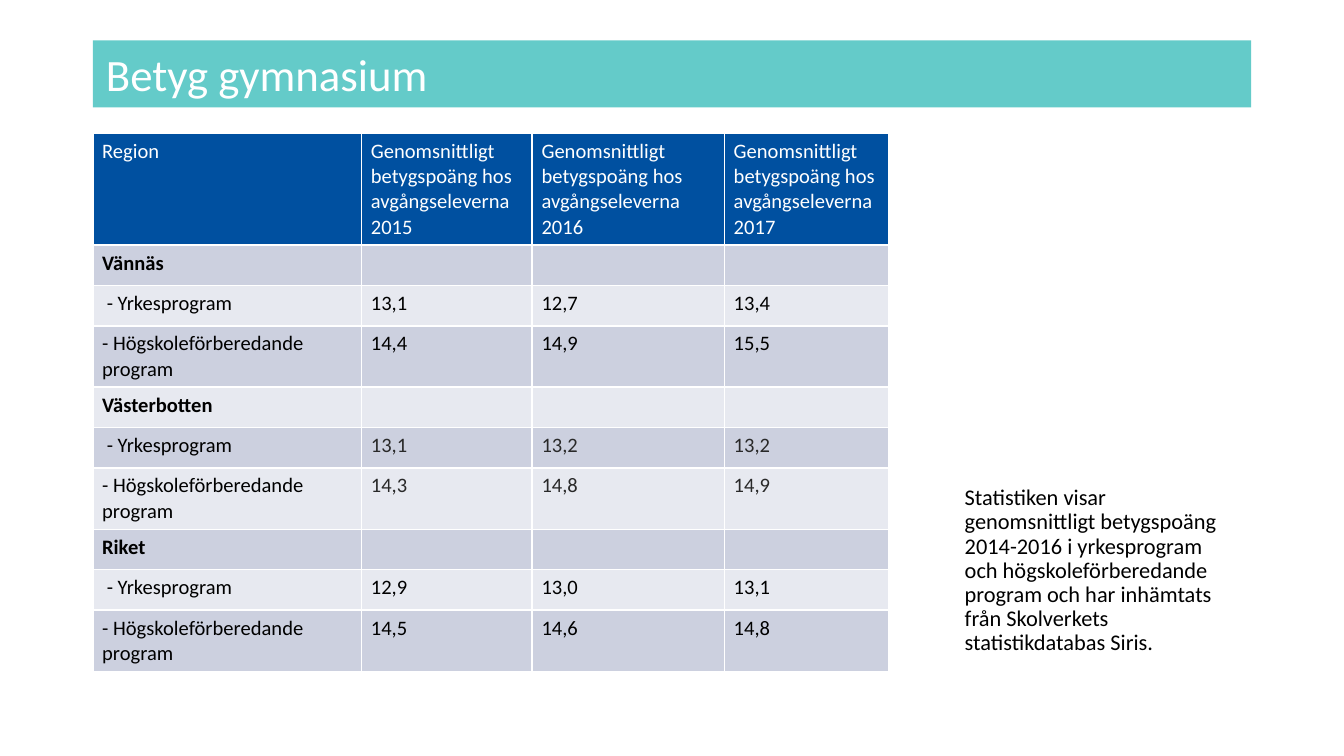
"""Build the slide with upper secondary school grades by region."""
from lxml.etree import SubElement
from pptx import Presentation
from pptx.dml.color import RGBColor
from pptx.enum.shapes import MSO_SHAPE
from pptx.enum.text import MSO_ANCHOR, PP_ALIGN
from pptx.oxml.ns import qn
from pptx.util import Inches, Pt

COLORS = {
    "banner": "64CBC9",
    "header": "0050A0",
    "band_dark": "CCD0DF",
    "band_light": "E7E9F0",
    "white": "FFFFFF",
    "black": "000000",
    "gray": "292929",
}
YEARS = [2015, 2016, 2017]
REGIONS = {
    "Vännäs": (["13,1", "12,7", "13,4"], ["14,4", "14,9", "15,5"]),
    "Västerbotten": (["13,1", "13,2", "13,2"], ["14,3", "14,8", "14,9"]),
    "Riket": (["12,9", "13,0", "13,1"], ["14,5", "14,6", "14,8"]),
}
COLUMN_WIDTHS = [2, 1.27, 1.43, 1.22]
HEADER_HEIGHT = 0.78
REGION_HEIGHTS = [0.3, 0.3, 0.42]
CELL_FORMAT = {
    "margin_left": Inches(0.07),
    "margin_right": Inches(0.07),
    "margin_top": Inches(0.04),
    "margin_bottom": Inches(0.04),
    "vertical_anchor": MSO_ANCHOR.TOP,
}


def write_text(paragraph, text, size, color, bold=False):
    paragraph.alignment = PP_ALIGN.LEFT
    run = paragraph.add_run()
    run.text = text
    font_format = {"name": "Calibri", "size": Pt(size), "bold": bold}
    for name, value in font_format.items():
        setattr(run.font, name, value)
    run.font.color.rgb = RGBColor.from_string(COLORS[color])


def add_borders(cell):
    properties = cell._tc.get_or_add_tcPr()
    for position, side in enumerate(["lnL", "lnR", "lnT", "lnB"]):
        line = properties.makeelement(qn(f"a:{side}"), {"w": str(Pt(1))})
        properties.insert(position, line)
        fill = SubElement(line, qn("a:solidFill"))
        SubElement(fill, qn("a:srgbClr"), val=COLORS["white"])


presentation = Presentation()
presentation.slide_width = Inches(10)
presentation.slide_height = Inches(10 * 9 / 16)
slide = presentation.slides.add_slide(presentation.slide_layouts[6])

banner = slide.shapes.add_shape(
    MSO_SHAPE.RECTANGLE, Inches(0.69), Inches(0.3), Inches(8.62), Inches(0.5)
)
banner.shadow.inherit = False
banner.fill.solid()
banner.fill.fore_color.rgb = RGBColor.from_string(COLORS["banner"])
banner.line.fill.background()
banner.text_frame.vertical_anchor = MSO_ANCHOR.MIDDLE
write_text(banner.text_frame.paragraphs[0], "Betyg gymnasium", 24, "white")

rows = [["Region"] + [f"Genomsnittligt betygspoäng hos avgångseleverna {year}" for year in YEARS]]
for region, (vocational, preparatory) in REGIONS.items():
    rows.append([region, "", "", ""])
    rows.append([" - Yrkesprogram"] + vocational)
    rows.append(["- Högskoleförberedande program"] + preparatory)
row_heights = [HEADER_HEIGHT] + REGION_HEIGHTS * len(REGIONS)

table = slide.shapes.add_table(
    len(rows), len(COLUMN_WIDTHS), Inches(0.69), Inches(0.99),
    Inches(sum(COLUMN_WIDTHS)), Inches(sum(row_heights)),
).table
for column, width in zip(table.columns, COLUMN_WIDTHS):
    column.width = Inches(width)

current_region = None
for row_index, (values, height) in enumerate(zip(rows, row_heights)):
    table.rows[row_index].height = Inches(height)
    is_header = row_index == 0
    if values[0] in REGIONS:
        current_region = values[0]
    band = "header" if is_header else "band_dark" if row_index % 2 else "band_light"
    for column_index, text in enumerate(values):
        cell = table.cell(row_index, column_index)
        for name, value in CELL_FORMAT.items():
            setattr(cell, name, value)
        cell.fill.solid()
        cell.fill.fore_color.rgb = RGBColor.from_string(COLORS[band])
        add_borders(cell)
        paragraph = cell.text_frame.paragraphs[0]
        if text:
            is_gray = current_region == "Västerbotten" and column_index > 0
            color = "white" if is_header else "gray" if is_gray else "black"
            write_text(paragraph, text, 11, color, bold=text in REGIONS)
        else:
            SubElement(paragraph._p, qn("a:endParaRPr"), sz="1100")

note = slide.shapes.add_textbox(Inches(7.08), Inches(3.57), Inches(2.23), Inches(1.38))
note.text_frame.word_wrap = True
note_paragraph = note.text_frame.paragraphs[0]
note_paragraph.line_spacing = 0.9
write_text(
    note_paragraph,
    "Statistiken visar genomsnittligt betygspoäng 2014-2016 i yrkesprogram "
    "och högskoleförberedande program och har inhämtats från Skolverkets "
    "statistikdatabas Siris.",
    12,
    "black",
)

presentation.save("out.pptx")
